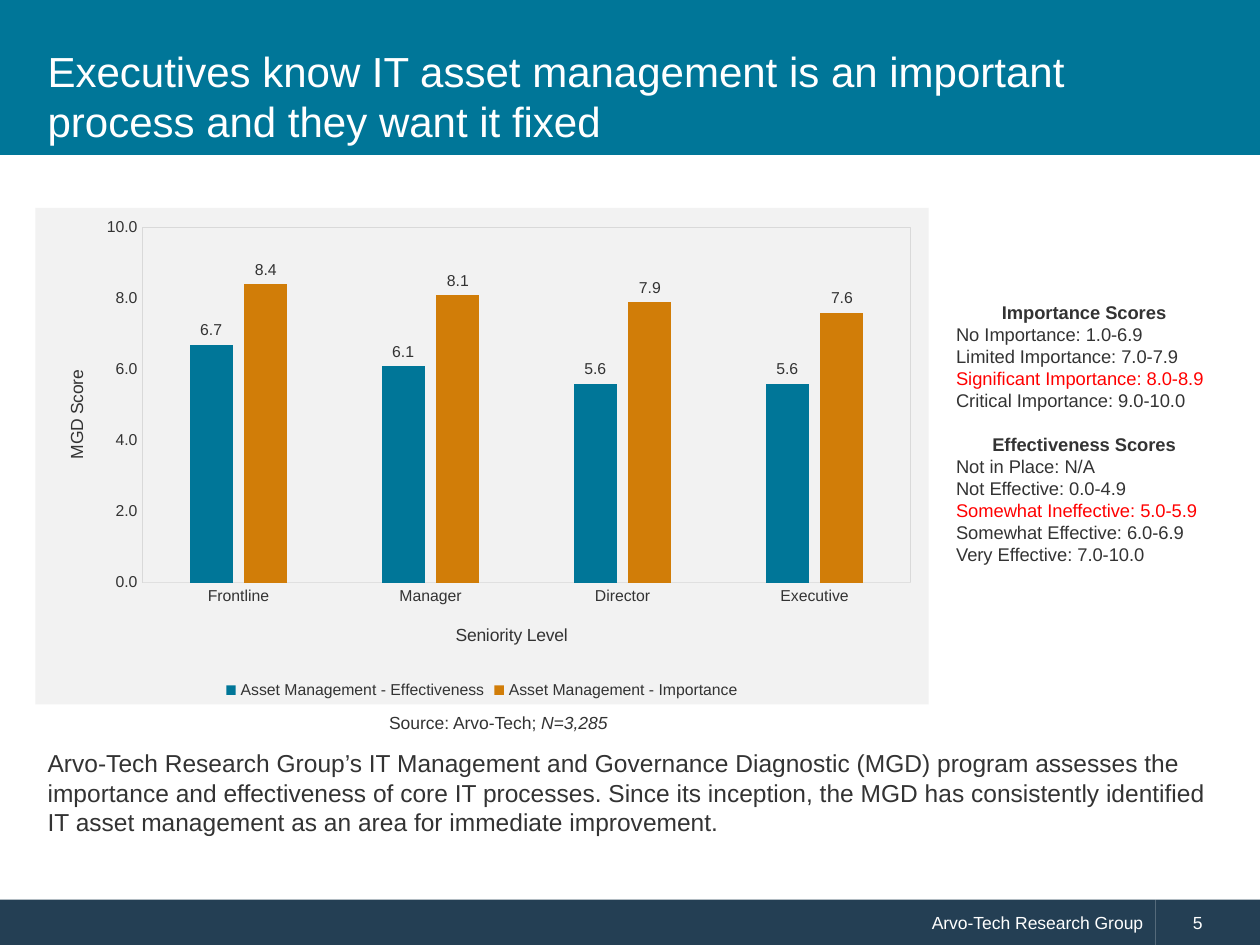
from lxml import etree
from pptx import Presentation
from pptx.chart.data import CategoryChartData
from pptx.dml.color import RGBColor
from pptx.enum.chart import XL_CHART_TYPE, XL_LABEL_POSITION, XL_LEGEND_POSITION, XL_TICK_MARK
from pptx.enum.shapes import MSO_SHAPE
from pptx.enum.text import MSO_ANCHOR, PP_ALIGN
from pptx.oxml import parse_xml
from pptx.oxml.ns import nsdecls, qn
from pptx.util import Inches, Pt

LEFT, CENTER, RIGHT = PP_ALIGN.LEFT, PP_ALIGN.CENTER, PP_ALIGN.RIGHT
TOP, MIDDLE = MSO_ANCHOR.TOP, MSO_ANCHOR.MIDDLE
COLUMNS = XL_CHART_TYPE.COLUMN_CLUSTERED
OUTSIDE = XL_LABEL_POSITION.OUTSIDE_END
BOTTOM = XL_LEGEND_POSITION.BOTTOM
NO_TICK = XL_TICK_MARK.NONE

FONT = "Arial"
TEAL, NAVY, ORANGE = "007698", "243F54", "D17D08"
WHITE, INK, RED, PANEL, RULE = "FFFFFF", "333333", "FF0000", "F2F2F2", "D9D9D9"

BANDS = [
    ((0, 7.14, 9.17, 0.36), NAVY),
    ((9.17, 7.14, 0.83, 0.36), NAVY),
    ((0, 0, 10, 1.23), TEAL),
]
FOOTERS = [("Arvo-Tech Research Group", RIGHT, 0), ("5", LEFT, 0.2)]
TITLE = "Executives know IT asset management is an important process and they want it fixed"
BODY = (
    "Arvo-Tech Research Group’s IT Management and Governance Diagnostic (MGD) program "
    "assesses the importance and effectiveness of core IT processes. Since its inception, "
    "the MGD has consistently identified IT asset management as an area for immediate improvement."
)
SOURCE = [("Source: Arvo-Tech; ", {}), ("N=3,285", {"italic": True})]
SCALES = [
    ("Importance Scores", [
        ("No Importance: 1.0-6.9", INK),
        ("Limited Importance: 7.0-7.9", INK),
        ("Significant Importance: 8.0-8.9", RED),
        ("Critical Importance: 9.0-10.0", INK),
    ]),
    ("Effectiveness Scores", [
        ("Not in Place: N/A", INK),
        ("Not Effective: 0.0-4.9", INK),
        ("Somewhat Ineffective: 5.0-5.9", RED),
        ("Somewhat Effective: 6.0-6.9", INK),
        ("Very Effective: 7.0-10.0", INK),
    ]),
]
LEVELS = ["Frontline", "Manager", "Director", "Executive"]
SERIES = [
    ("Asset Management - Effectiveness", [6.7, 6.1, 5.6, 5.6], TEAL),
    ("Asset Management - Importance", [8.4, 8.1, 7.9, 7.6], ORANGE),
]
PLOT_LAYOUT = {"x": 0.12, "y": 0.04, "w": 0.86, "h": 0.715}


def rgb(value):
    return RGBColor.from_string(value)


def style(font, size, color=INK, **attrs):
    for name, value in {"name": FONT, "size": Pt(size), **attrs}.items():
        setattr(font, name, value)
    font.color.rgb = rgb(color)


def write(p, runs, size, color=INK, align=LEFT, indent=0):
    p.alignment = align
    if indent:
        p._p.get_or_add_pPr().set("marL", str(Inches(indent)))
    for text, attrs in runs:
        r = p.add_run()
        r.text = text
        style(r.font, size, color, **attrs)


def add_band(slide, box, fill):
    sp = slide.shapes.add_shape(MSO_SHAPE.RECTANGLE, *map(Inches, box))
    sp.shadow.inherit = False
    sp.fill.solid()
    sp.fill.fore_color.rgb = rgb(fill)
    sp.line.fill.background()
    sp.text_frame.vertical_anchor = MIDDLE
    return sp


def add_text(slide, box, anchor=TOP):
    tf = slide.shapes.add_textbox(*map(Inches, box)).text_frame
    tf.word_wrap = True
    tf.vertical_anchor = anchor
    return tf


def place(parent, index, values):
    old = parent.find(qn("c:layout"))
    if old is not None:
        parent.remove(old)
    layout = etree.Element(qn("c:layout"))
    manual = etree.SubElement(layout, qn("c:manualLayout"))
    if "w" in values:
        etree.SubElement(manual, qn("c:layoutTarget")).set("val", "inner")
    for axis in "xy":
        etree.SubElement(manual, qn(f"c:{axis}Mode")).set("val", "edge")
    for key, value in values.items():
        etree.SubElement(manual, qn(f"c:{key}")).set("val", str(value))
    parent.insert(index, layout)


def area_format(fill, line):
    return parse_xml(f"<c:spPr {nsdecls('c', 'a')}>{fill}<a:ln w='9525'>{line}</a:ln></c:spPr>")


def solid(color):
    return f"<a:solidFill><a:srgbClr val='{color}'/></a:solidFill>"


def format_axis(axis, title, line, x, y):
    axis.has_major_gridlines = False
    axis.major_tick_mark = axis.minor_tick_mark = NO_TICK
    style(axis.tick_labels.font, 9)
    axis.format.line.color.rgb = rgb(line)
    axis.format.line.width = Pt(0.75)
    write(axis.axis_title.text_frame.paragraphs[0], [(title, {"bold": False})], 10, align=CENTER)
    place(axis.axis_title._element, 1, {"x": x, "y": y})


def add_scores_chart(slide):
    data = CategoryChartData(number_format="0.0")
    data.categories = LEVELS
    for name, values, _ in SERIES:
        data.add_series(name, values)
    box = map(Inches, (0.28, 1.65, 7.09, 3.94))
    chart = slide.shapes.add_chart(COLUMNS, *box, data).chart
    style(chart.font, 10)
    chart.has_title = False
    chart.has_legend = True
    chart.legend.position = BOTTOM
    chart.legend.include_in_layout = False
    style(chart.legend.font, 9)

    plot = chart.plots[0]
    plot.vary_by_categories = False
    plot.gap_width, plot.overlap = 219, -27
    for series, (_, _, color) in zip(plot.series, SERIES):
        series.format.fill.solid()
        series.format.fill.fore_color.rgb = rgb(color)
        labels = series.data_labels
        for name, value in {"show_value": True, "position": OUTSIDE, "number_format": "0.0",
                            "number_format_is_linked": False}.items():
            setattr(labels, name, value)
        style(labels.font, 9)

    format_axis(chart.category_axis, "Seniority Level", "E0E0E0", 0.467, 0.83)
    values = chart.value_axis
    format_axis(values, "MGD Score", RULE, 0.03, 0.32)
    values.minimum_scale, values.maximum_scale, values.major_unit = 0, 10, 2
    values.tick_labels.number_format = "0.0"
    values.tick_labels.number_format_is_linked = False

    frame = chart._chartSpace.find(qn("c:chart"))
    frame.addnext(area_format(solid(PANEL), "<a:noFill/>"))
    area = frame.find(qn("c:plotArea"))
    place(area, 0, PLOT_LAYOUT)
    area.append(area_format("<a:noFill/>", solid(RULE)))


def add_scales(slide):
    tf = add_text(slide, (7.37, 2.34, 2.47, 2.22))
    p = tf.paragraphs[0]
    for i, (heading, levels) in enumerate(SCALES):
        if i:
            p = tf.add_paragraph()
            p.space_before = Pt(12.6)
        write(p, [(heading, {"bold": True})], 10.5, align=CENTER)
        for text, color in levels:
            write(tf.add_paragraph(), [(text, {})], 10.5, color, indent=0.12)


def main():
    """Build the asset management scores slide."""
    prs = Presentation()
    prs.slide_width, prs.slide_height = Inches(10), Inches(7.5)
    slide = prs.slides.add_slide(prs.slide_layouts[6])
    bands = [add_band(slide, box, fill) for box, fill in BANDS]
    for sp, (text, align, indent) in zip(bands, FOOTERS):
        write(sp.text_frame.paragraphs[0], [(text, {})], 10, WHITE, align, indent)
    title = add_text(slide, (0.28, 0.28, 9.43, 0.96), MIDDLE)
    write(title.paragraphs[0], [(TITLE, {})], 24, WHITE)
    body = add_text(slide, (0.28, 5.89, 9.43, 0.81))
    write(body.paragraphs[0], [(BODY, {})], 14)
    add_scales(slide)
    source = add_text(slide, (2.94, 5.6, 2.03, 0.27))
    write(source.paragraphs[0], SOURCE, 10, align=CENTER)
    add_scores_chart(slide)
    prs.save("out.pptx")


if __name__ == "__main__":
    main()
